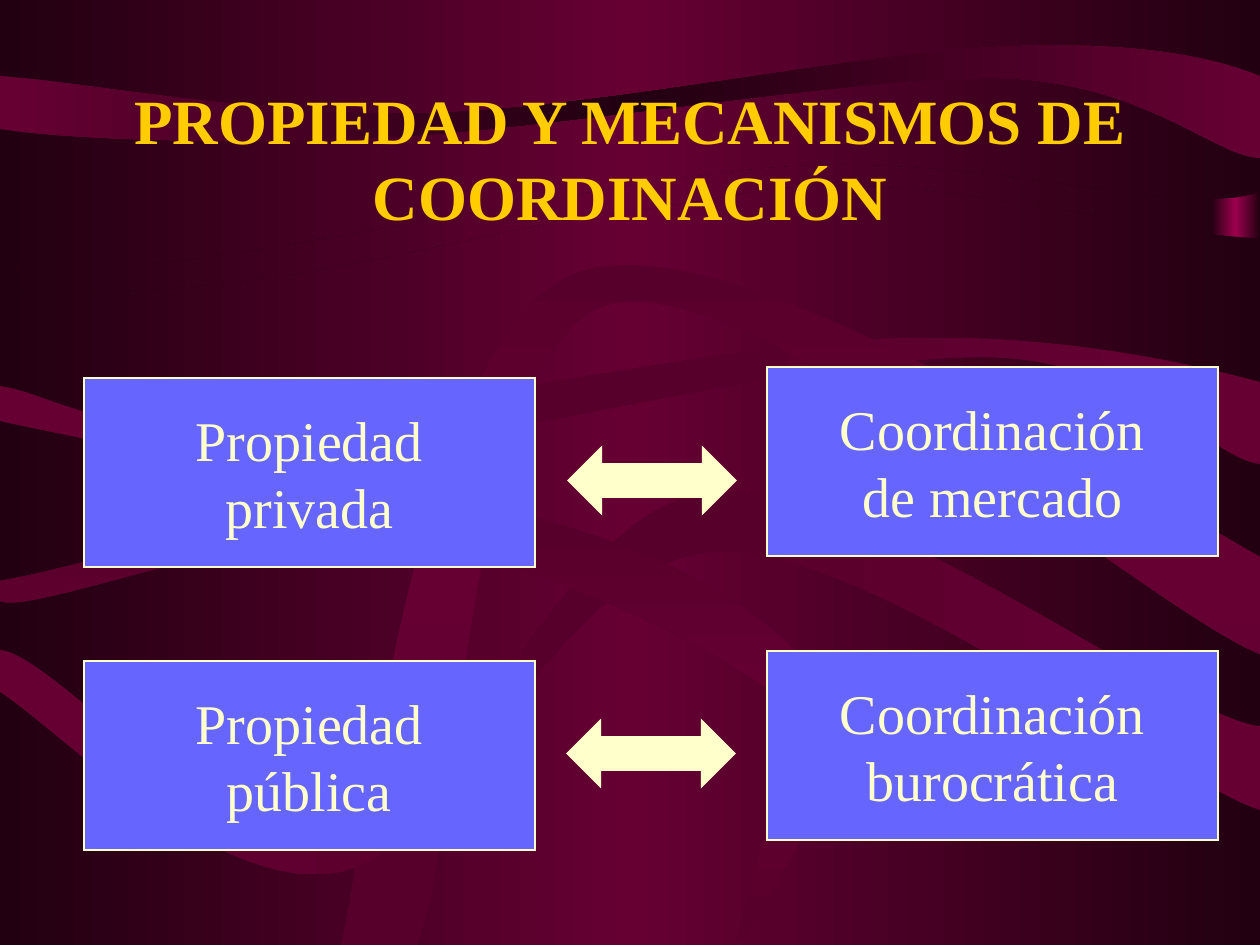
from pptx import Presentation
from pptx import util as u
from pptx.dml.color import RGBColor
from pptx.enum import shapes, text
from pptx.oxml import parse_xml
from pptx.oxml.ns import nsdecls

PX = 914400 / 126
FONT = "Times New Roman"
DARK, WINE, PLUM, MAGENTA = "220011", "660033", "56002B", "9C004E"
CREAM, GOLD, BLUE = "FFFFCC", "FFCC00", "6666FF"

# Outlines: a pair is a straight line's end, six numbers are a Bezier curve
# (two control points and the end). Then edge colour, middle colour, angle.
BACKDROPS = [
    ([(0, 0), (1260, 0), (1260, 192), (1182, 219, 998, 154, 788, 166),
      (577, 179, 131, 294, 0, 266), (0, 0)], DARK, WINE, 0),
    ([(0, 287), (224, 309, 428, 244, 577, 219), (577, 219, 714, 200, 738, 195),
      (901, 160, 1155, 238, 1260, 238), (1260, 945), (0, 945),
      (0, 945, 0, 287, 0, 287)], DARK, WINE, 0),
]
RIBBONS = [
    ([(0, 76), (0, 129), (64, 139, 222, 145, 388, 137),
      (554, 129, 856, 76, 1000, 78), (1145, 82, 1217, 158, 1260, 158),
      (1260, 76), (1216, 58, 1135, 40, 998, 47),
      (859, 53, 601, 108, 435, 113), (268, 118, 91, 83, 0, 76)], WINE, DARK, 0),
    ([(0, 386), (0, 421), (47, 432, 221, 466, 280, 473),
      (339, 479, 239, 478, 355, 459), (473, 438, 832, 355, 983, 357),
      (1134, 357, 1213, 460, 1260, 464), (1260, 382),
      (1197, 365, 1053, 331, 883, 339), (713, 345, 387, 418, 239, 426),
      (92, 433, 50, 393, 0, 386)], WINE, PLUM, 0),
    ([(341, 945), (367, 833, 418, 339, 572, 275),
      (725, 209, 1145, 494, 1260, 557), (1260, 654),
      (1150, 611, 745, 258, 604, 306), (464, 355, 461, 839, 417, 945),
      (341, 945)], PLUM, WINE, 90),
    ([(0, 650), (0, 692), (57, 728, 219, 896, 339, 872),
      (457, 849, 558, 562, 712, 552), (866, 541, 1168, 781, 1260, 810),
      (1260, 726), (1182, 721, 871, 475, 708, 493),
      (556, 512, 462, 814, 344, 840), (226, 867, 57, 655, 0, 650)],
     WINE, PLUM, 0),
    ([(0, 581), (0, 601), (33, 616, 262, 519, 396, 539),
      (529, 559, 746, 653, 803, 721), (859, 788, 733, 954, 735, 945),
      (809, 670), (764, 597, 596, 519, 461, 505),
      (326, 490, 96, 564, 0, 581)], PLUM, WINE, 90),
]


def px(value):
    return u.Emu(round(value * PX))


def color(value):
    return RGBColor.from_string(value)


def set_gradient(owner, fill, edge, middle, angle=0):
    """Fill with a gradient that runs edge, middle, edge."""
    fill.gradient()
    fill.gradient_angle = angle
    stops = owner.element.xpath(".//a:gsLst")[0]
    for stop in list(stops):
        stops.remove(stop)
    for position, value in ((0, edge), (50000, middle), (100000, edge)):
        stops.append(parse_xml(
            f'<a:gs {nsdecls("a")} pos="{position}"><a:srgbClr val="{value}"/></a:gs>'))


def bend(wave, segments):
    """Join the three lines of each curve segment into one Bezier curve."""
    lines = iter(wave.element.xpath(".//a:lnTo"))
    for segment in segments:
        if len(segment) == 2:
            next(lines)
            continue
        curve = parse_xml(f'<a:cubicBezTo {nsdecls("a")}/>')
        for number in range(3):
            line = next(lines)
            if number == 0:
                line.addprevious(curve)
            curve.append(line[0])
            line.getparent().remove(line)


def add_wave(group, outline, edge, middle, angle):
    start, *segments = outline
    points = [(px(segment[i]), px(segment[i + 1]))
              for segment in segments for i in range(0, len(segment), 2)]
    builder = group.shapes.build_freeform(px(start[0]), px(start[1]))
    builder.add_line_segments(points, close=True)
    wave = builder.convert_to_shape()
    bend(wave, segments)
    wave.shadow.inherit = False
    wave.line.fill.background()
    set_gradient(wave, wave.fill, edge, middle, angle)


def add_preset(parent, kind, left, top, width, height):
    shape = parent.shapes.add_shape(kind, px(left), px(top), px(width), px(height))
    shape.shadow.inherit = False
    return shape


def add_outlined(slide, kind, left, top, width, height, fill):
    shape = add_preset(slide, kind, left, top, width, height)
    shape.fill.solid()
    shape.fill.fore_color.rgb = color(fill)
    shape.line.color.rgb = color(CREAM)
    shape.line.width = u.Pt(0.75)
    outline = shape.element.xpath("p:spPr/a:ln")[0]
    outline.append(parse_xml(f'<a:miter {nsdecls("a")} lim="800000"/>'))


    return shape


def write(shape, *lines, size, ink, bold=False, wrap=True):
    """Write one centred paragraph for each line."""
    frame = shape.text_frame
    frame.word_wrap = wrap
    frame.auto_size = text.MSO_AUTO_SIZE.NONE
    frame.vertical_anchor = text.MSO_ANCHOR.MIDDLE
    for index, line in enumerate(lines):
        paragraph = frame.add_paragraph() if index else frame.paragraphs[0]
        paragraph.alignment = text.PP_ALIGN.CENTER
        paragraph.line_spacing = 1.0
        run = paragraph.add_run()
        run.text = line
        run.font.name = FONT
        run.font.size = u.Pt(size)
        run.font.bold = bold
        run.font.color.rgb = color(ink)


def add_box(slide, left, top, *lines):
    box = add_outlined(slide, shapes.MSO_SHAPE.RECTANGLE, left, top, 451, 189, BLUE)
    write(box, *lines, size=32, ink=CREAM, wrap=False)


def add_double_arrow(slide, left, top):
    add_outlined(slide, shapes.MSO_SHAPE.LEFT_RIGHT_ARROW, left, top, 168, 67, CREAM)


def add_background(slide):
    """Draw the waves as one group and move it to the slide master."""
    set_gradient(slide, slide.background.fill, DARK, WINE)
    group = slide.shapes.add_group_shape()
    band = add_preset(group, shapes.MSO_SHAPE.RECTANGLE, 1211, 62, 49, 435)
    band.line.fill.background()
    set_gradient(band, band.fill, DARK, MAGENTA)
    for wave in BACKDROPS + RIBBONS:
        add_wave(group, *wave)
    for number, properties in enumerate(group.element.xpath(".//p:cNvPr"), 100):
        properties.set("id", str(number))
    master = slide.slide_layout.slide_master
    master.shapes[0].element.addprevious(group.element)


def add_title(slide, words):
    title = slide.shapes.title
    title.left, title.top, title.width, title.height = map(px, (42, 84, 1176, 147))
    write(title, words, size=36, ink=GOLD, bold=True)


def main():
    presentation = Presentation()
    presentation.slide_width, presentation.slide_height = px(1260), px(945)
    slide = presentation.slides.add_slide(presentation.slide_layouts[5])
    add_background(slide)
    add_title(slide, "PROPIEDAD Y MECANISMOS DE COORDINACIÓN")
    add_double_arrow(slide, 568, 447)
    add_box(slide, 84, 378, "Propiedad", "privada")
    add_box(slide, 767, 367, "Coordinación", "de mercado")
    add_double_arrow(slide, 567, 720)
    add_box(slide, 767, 651, "Coordinación", "burocrática")
    add_box(slide, 84, 661, "Propiedad", "pública")
    presentation.save("out.pptx")


if __name__ == "__main__":
    main()
